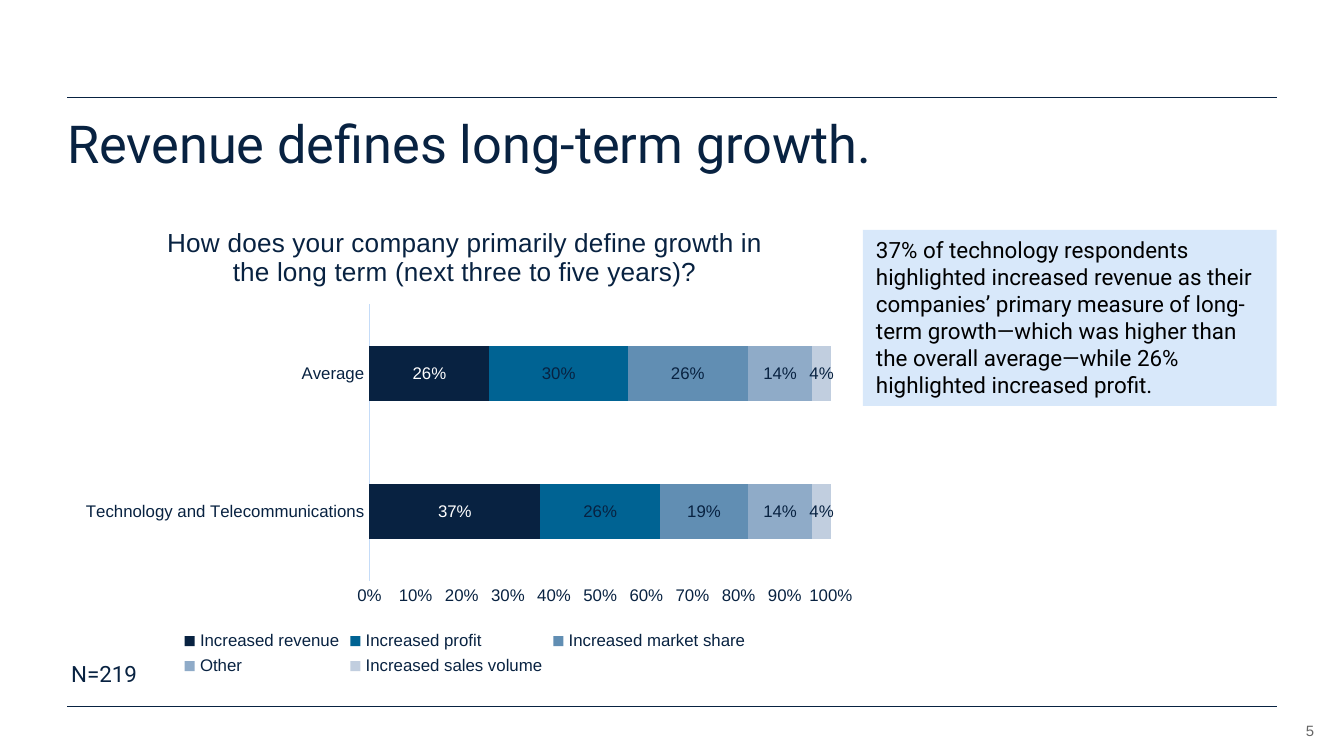
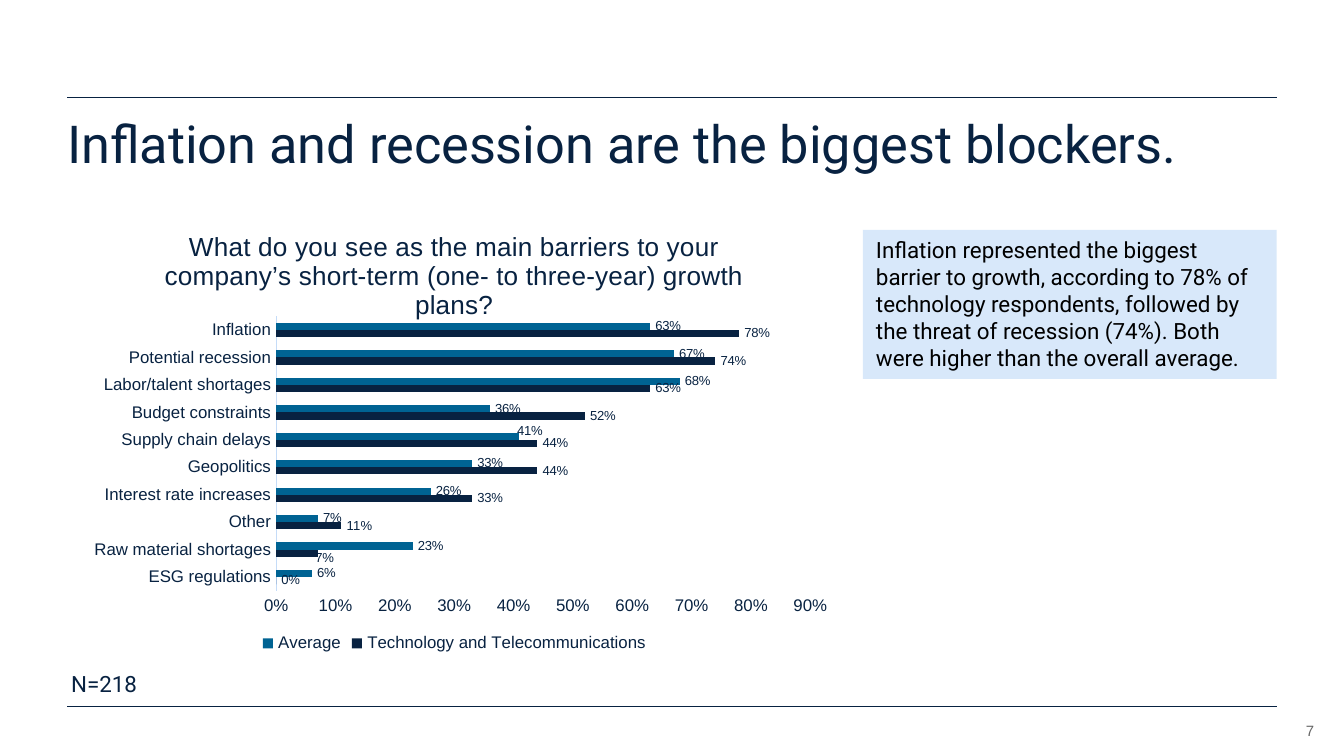
from dataclasses import dataclass

from lxml.etree import SubElement
from pptx import Presentation
from pptx.chart.data import CategoryChartData
from pptx.dml.color import RGBColor
from pptx.enum.chart import (XL_CHART_TYPE, XL_LABEL_POSITION,
                             XL_LEGEND_POSITION, XL_TICK_MARK)
from pptx.enum.shapes import MSO_CONNECTOR, MSO_SHAPE
from pptx.enum.text import MSO_ANCHOR, MSO_AUTO_SIZE, PP_ALIGN
from pptx.oxml import parse_xml
from pptx.oxml.ns import nsdecls, qn
from pptx.util import Pt


@dataclass(frozen=True)
class Theme:
    navy: str = "082241"
    blue: str = "006393"
    steel: str = "618EB3"
    mist: str = "8FABC8"
    haze: str = "C1CEDF"
    axis: str = "C5DCF8"
    panel: str = "D8E8FA"
    white: str = "FFFFFF"
    black: str = "000000"
    grey: str = "666666"
    head: str = "Roboto"
    plain: str = "Arial"
    title: int = 28
    ask: int = 14
    body: int = 12
    base: int = 10
    label: int = 9
    page: int = 8
    small: int = 7


LEFT, RIGHT = 36, 684
RULES = 52, 378.7


def put(item, **values):
    for key, value in values.items():
        setattr(item, key, value)


def rgb(code):
    return RGBColor.from_string(code)


def layout(inner):
    return parse_xml(f"<c:layout {nsdecls('c')}><c:manualLayout>{inner}"
                     "</c:manualLayout></c:layout>")


class Deck:
    def __init__(self, theme):
        self.theme = theme
        self.file = Presentation()
        put(self.file, slide_width=Pt(720), slide_height=Pt(405))
        self.slide = None

    def font(self, font, size, color=None, name=None):
        put(font, size=Pt(size), name=name or self.theme.plain, bold=False)
        font.color.rgb = rgb(color or self.theme.navy)

    def fill(self, shape, text, size, color=None, name=None, inset=None,
             anchor=MSO_ANCHOR.TOP, align=PP_ALIGN.LEFT, spacing=None):
        """Set the text of a shape and its format."""
        frame = shape.text_frame
        put(frame, word_wrap=True, auto_size=MSO_AUTO_SIZE.NONE,
            vertical_anchor=anchor)
        if inset is not None:
            put(frame, margin_left=Pt(inset), margin_top=Pt(inset),
                margin_right=Pt(inset), margin_bottom=Pt(inset))
        frame.text = text
        line = frame.paragraphs[0]
        put(line, alignment=align, line_spacing=spacing)
        self.font(line.runs[0].font, size, color, name)

    def start(self, title, page):
        """Add a slide with its rules, title and page number."""
        look = self.theme
        self.slide = self.file.slides.add_slide(self.file.slide_layouts[5])
        for y in RULES:
            self.rule(y)
        self.text(str(page), (670.3, 383, 33.8, 13), look.page, look.grey,
                  look.plain, inset=0, anchor=MSO_ANCHOR.BOTTOM,
                  align=PP_ALIGN.RIGHT)
        head = self.slide.shapes.title
        put(head, left=Pt(LEFT), top=Pt(63.4), width=Pt(RIGHT - LEFT),
            height=Pt(39.6))
        self.fill(head, title, look.title, name=look.head, inset=0,
                  spacing=0.9)

    def rule(self, y):
        line = self.slide.shapes.add_connector(
            MSO_CONNECTOR.STRAIGHT, Pt(LEFT), Pt(y), Pt(RIGHT), Pt(y))
        line.line.width = Pt(0.5)
        line.line.color.rgb = rgb(self.theme.navy)
        SubElement(line._element.spPr, qn("a:effectLst"))

    def text(self, text, box, size, color=None, name=None, **style):
        shape = self.slide.shapes.add_textbox(*map(Pt, box))
        self.fill(shape, text, size, color, name, **style)

    def sample(self, count, top):
        self.text(f"N={count}", (31, top, 118.8, 21.6), self.theme.body,
                  name=self.theme.head)

    def callout(self, text, height):
        look = self.theme
        shape = self.slide.shapes.add_shape(
            MSO_SHAPE.RECTANGLE, Pt(462.2), Pt(123.1), Pt(RIGHT - 462.2),
            Pt(height))
        shape.shadow.inherit = False
        shape.fill.solid()
        shape.fill.fore_color.rgb = rgb(look.panel)
        shape.line.fill.background()
        self.fill(shape, text, look.body, look.black, look.head)

    def chart(self, kind, box, title, cats, rows, plot, top, gap, spot, size):
        """Add a bar chart; rows hold name, values, fill and label colour."""
        look = self.theme
        data = CategoryChartData(number_format="0%")
        data.categories = cats
        for name, values, *_ in rows:
            data.add_series(name, [value / 100 for value in values])
        chart = self.slide.shapes.add_chart(kind, *map(Pt, box), data).chart
        self.font(chart.font, look.base)
        put(chart, has_title=True, has_legend=True)
        head = chart.chart_title
        head.include_in_layout = False
        head.text_frame.text = title
        self.font(head.text_frame.paragraphs[0].runs[0].font, look.ask)
        put(chart.legend, position=XL_LEGEND_POSITION.BOTTOM,
            include_in_layout=False)
        self.font(chart.legend.font, look.label)
        self.axes(chart, top)
        bars = chart.plots[0]
        put(bars, gap_width=gap, vary_by_categories=False)
        for series, (_, _, fill, ink) in zip(bars.series, rows):
            series.format.fill.solid()
            series.format.fill.fore_color.rgb = rgb(fill)
            labels = series.data_labels
            put(labels, show_value=True, number_format="0%",
                number_format_is_linked=False, position=spot)
            self.font(labels.font, size, ink)
        self.area(chart, plot)
        return chart

    def axes(self, chart, top):
        for axis in (chart.category_axis, chart.value_axis):
            put(axis, has_major_gridlines=False,
                major_tick_mark=XL_TICK_MARK.NONE,
                minor_tick_mark=XL_TICK_MARK.NONE)
            self.font(axis.tick_labels.font, self.theme.label)
        line = chart.category_axis.format.line
        line.width = Pt(0.75)
        line.color.rgb = rgb(self.theme.axis)
        scale = chart.value_axis
        put(scale, minimum_scale=0, maximum_scale=top, major_unit=0.1)
        put(scale.tick_labels, number_format="0%",
            number_format_is_linked=False)
        scale.format.line.fill.background()

    def area(self, chart, plot):
        """Fix the inner plot area as shares of the chart."""
        area = chart._chartSpace.chart.plotArea
        for old in area.findall(qn("c:layout")):
            area.remove(old)
        sizes = "".join(f'<c:{key} val="{value}"/>'
                        for key, value in zip("xywh", plot))
        area.insert(0, layout(
            '<c:layoutTarget val="inner"/><c:xMode val="edge"/>'
            '<c:yMode val="edge"/>' + sizes))

    def nudge(self, chart, row, point, x, y):
        """Shift one value label by shares of the chart."""
        series = chart.plots[0].series[row]
        label = series.points[point].data_label
        self.font(label.font, self.theme.small)
        label.position = XL_LABEL_POSITION.OUTSIDE_END
        mark = series._element.find(f"{qn('c:dLbls')}/{qn('c:dLbl')}")
        mark.insert(1, layout(f'<c:x val="{x}"/><c:y val="{y}"/>'))


def growth(deck):
    look = deck.theme
    deck.start("Revenue defines long-term growth.", 5)
    deck.callout(
        "37% of technology respondents highlighted increased revenue as "
        "their companies’ primary measure of long-term growth—which was "
        "higher than the overall average—while 26% highlighted increased "
        "profit.", 94.3)
    deck.sample(219, 350)
    rows = [
        ("Increased revenue", (37, 26), look.navy, look.white),
        ("Increased profit", (26, 30), look.blue, look.navy),
        ("Increased market share", (19, 26), look.steel, look.navy),
        ("Other", (14, 14), look.mist, look.navy),
        ("Increased sales volume", (4, 4), look.haze, look.navy),
    ]
    chart = deck.chart(
        XL_CHART_TYPE.BAR_STACKED_100, (LEFT, 109.4, 426.2, 255.6),
        "How does your company primarily define growth in "
        "the long term (next three to five years)?",
        ("Technology and Telecommunications", "Average"), rows,
        plot=(0.38, 0.21, 0.58, 0.58), top=1, gap=150,
        spot=XL_LABEL_POSITION.CENTER, size=look.label)
    chart.plots[0].overlap = 100


def blockers(deck):
    look = deck.theme
    deck.start("Inflation and recession are the biggest blockers.", 7)
    deck.callout(
        "Inflation represented the biggest barrier to growth, according to "
        "78% of technology respondents, followed by the threat of recession "
        "(74%). Both were higher than the overall average.", 79.9)
    cats = ("ESG regulations", "Raw material shortages", "Other",
            "Interest rate increases", "Geopolitics", "Supply chain delays",
            "Budget constraints", "Labor/talent shortages",
            "Potential recession", "Inflation")
    rows = [
        ("Technology and Telecommunications",
         (0, 7, 11, 33, 44, 44, 52, 63, 74, 78), look.navy, look.navy),
        ("Average",
         (6, 23, 7, 26, 33, 41, 36, 68, 67, 63), look.blue, look.navy),
    ]
    chart = deck.chart(
        XL_CHART_TYPE.BAR_CLUSTERED, (LEFT, 111.6, 414.7, 241.2),
        "What do you see as the main barriers to your company’s short-term "
        "(one- to three-year) growth plans?", cats, rows,
        plot=(0.27, 0.24, 0.69, 0.61), top=0.9, gap=182,
        spot=XL_LABEL_POSITION.OUTSIDE_END, size=look.small)
    deck.nudge(chart, 0, 1, -0.01, 0.01)
    deck.nudge(chart, 1, 5, -0.01, -0.01)
    deck.sample(218, 355.7)


def main():
    deck = Deck(Theme())
    growth(deck)
    blockers(deck)
    deck.file.save("out.pptx")


if __name__ == "__main__":
    main()
